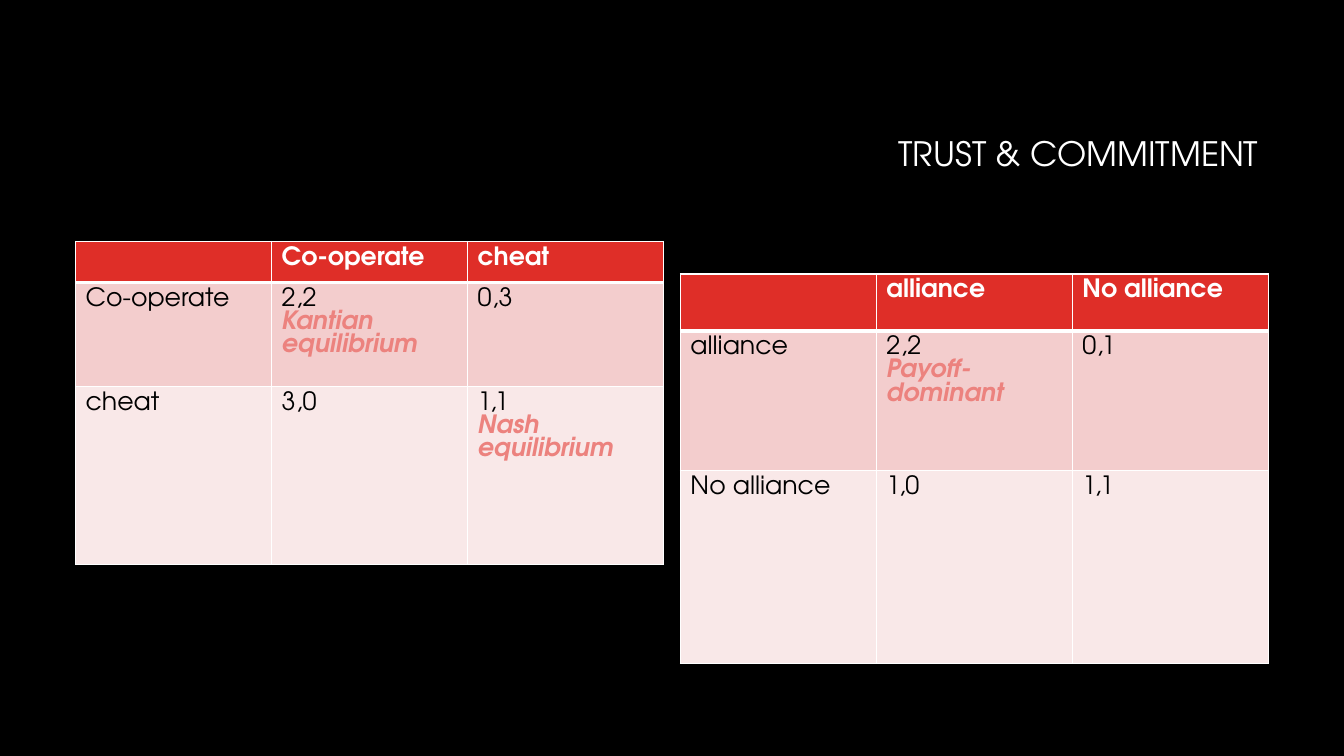
from lxml import etree
from pptx import Presentation
from pptx.dml.color import RGBColor
from pptx.enum.text import MSO_ANCHOR, PP_ALIGN
from pptx.oxml.ns import qn
from pptx.util import Emu, Pt

MIDDLE = MSO_ANCHOR.MIDDLE
RIGHT = PP_ALIGN.RIGHT
TITLE_ONLY = 5
FONT = "TeX Gyre Adventor"
COLORS = {
    "background": "000000",
    "white": "FFFFFF",
    "header": "DF2E28",
    "text": "000000",
    "equilibrium": "EC827E",
}
ROW_FILLS = [COLORS["header"], "F3CDCD", "F9E8E8"]

TRUST_GAME = [
    ["", "Co-operate", "cheat"],
    ["Co-operate", "2,2\nKantian equilibrium", "0,3"],
    ["cheat", "3,0", "1,1\nNash equilibrium"],
]
ALLIANCE_GAME = [
    ["", "alliance", "No alliance"],
    ["alliance", "2,2\nPayoff-dominant", "0,1"],
    ["No alliance", "1,0", "1,1"],
]


def px(length):
    return Emu(length * 9525)


def rgb(name):
    return RGBColor.from_string(COLORS[name])


def set_font(paragraph, size, color, bold=False, italic=False):
    font = paragraph.font
    font.name = FONT
    font.size = Pt(size)
    font.bold = bold
    font.italic = italic
    font.color.rgb = rgb(color)


def set_borders(cell, top, bottom):
    """Draw white borders, 1 pt at the sides; top and bottom are in points."""
    properties = cell._tc.get_or_add_tcPr()
    sides = [("a:lnL", 1), ("a:lnR", 1), ("a:lnT", top), ("a:lnB", bottom)]
    for position, (tag, width) in enumerate(sides):
        line = etree.Element(qn(tag), w=str(Pt(width)))
        fill = etree.SubElement(line, qn("a:solidFill"))
        etree.SubElement(fill, qn("a:srgbClr"), val=COLORS["white"])
        properties.insert(position, line)


def add_title(slide, text, left, top, width, height):
    title = slide.shapes.title
    title.left, title.top = px(left), px(top)
    title.width, title.height = px(width), px(height)
    frame = title.text_frame
    frame.text = text
    frame.word_wrap = True
    frame.vertical_anchor = MIDDLE
    paragraph = frame.paragraphs[0]
    paragraph.alignment = RIGHT
    paragraph.line_spacing = 0.9
    set_font(paragraph, 24, "white")


def fill_cell(cell, text, row_index):
    """Write the payoff in plain text and any line below it as an equilibrium."""
    is_header = row_index == 0
    cell.fill.solid()
    cell.fill.fore_color.rgb = RGBColor.from_string(ROW_FILLS[row_index])
    set_borders(cell, top=3 if row_index == 1 else 1, bottom=3 if is_header else 1)
    cell.text_frame.text = text
    first, *labels = cell.text_frame.paragraphs
    set_font(first, 18, "white" if is_header else "text", bold=is_header)
    for label in labels:
        set_font(label, 18, "equilibrium", bold=True, italic=True)


def add_payoff_table(slide, payoffs, left, top, width, row_heights):
    table = slide.shapes.add_table(
        len(payoffs), len(payoffs[0]),
        px(left), px(top), px(width), px(sum(row_heights)),
    ).table
    for row_index, (texts, height) in enumerate(zip(payoffs, row_heights)):
        table.rows[row_index].height = px(height)
        for column_index, text in enumerate(texts):
            fill_cell(table.cell(row_index, column_index), text, row_index)


def build_trust_slide(presentation):
    slide = presentation.slides.add_slide(presentation.slide_layouts[TITLE_ONLY])
    slide.background.fill.solid()
    slide.background.fill.fore_color.rgb = rgb("background")
    add_title(slide, "TRUST & COMMITMENT", 304, 81, 904, 135)
    add_payoff_table(slide, TRUST_GAME, 72, 230, 560, [39, 99, 170])
    add_payoff_table(slide, ALLIANCE_GAME, 648, 261, 560, [54, 133, 184])


def main():
    presentation = Presentation()
    presentation.slide_width = px(1280)
    presentation.slide_height = px(720)
    build_trust_slide(presentation)
    presentation.save("out.pptx")


if __name__ == "__main__":
    main()
